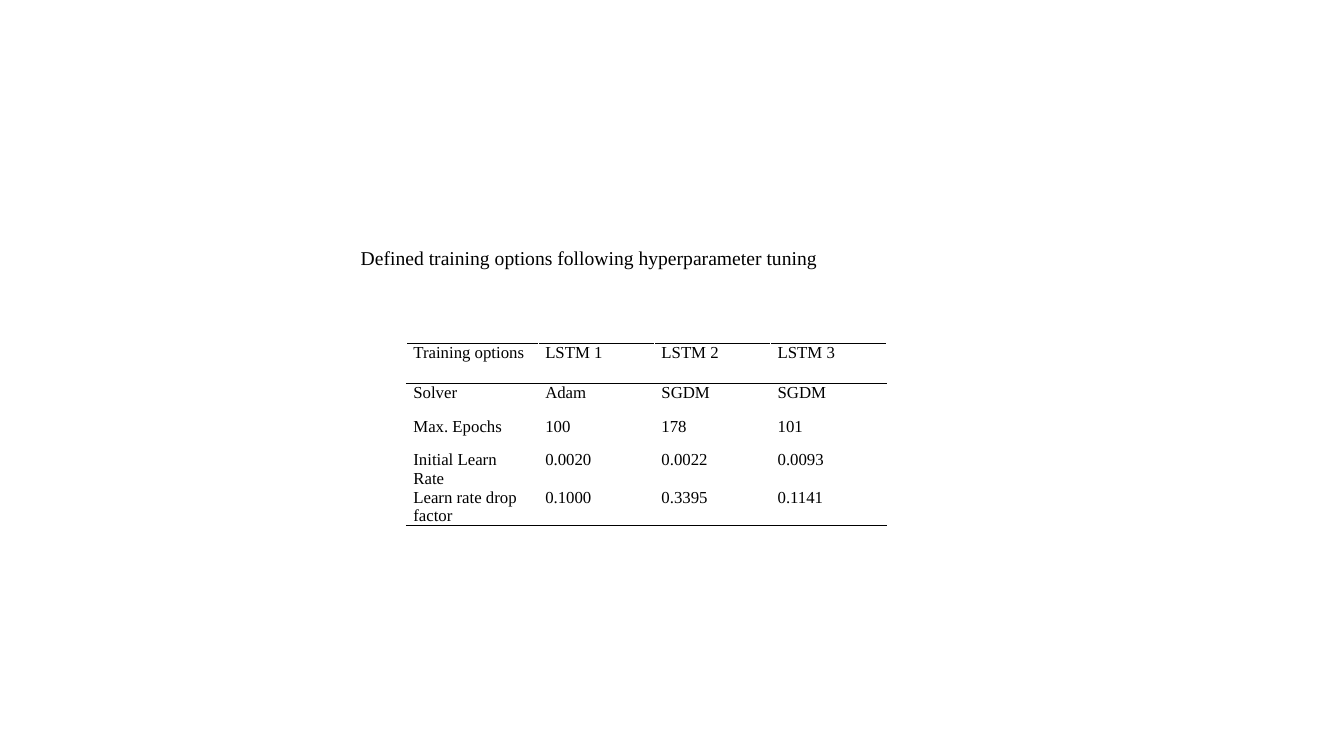
from lxml import etree
from pptx import Presentation
from pptx.dml.color import RGBColor
from pptx.enum.text import MSO_ANCHOR, MSO_AUTO_SIZE
from pptx.oxml.ns import qn
from pptx.util import Pt

# Content
TITLE = "Defined training options following hyperparameter tuning"
TRAINING_OPTIONS = [
    ("Training options", "LSTM 1", "LSTM 2", "LSTM 3"),
    ("Solver", "Adam", "SGDM", "SGDM"),
    ("Max. Epochs", "100", "178", "101"),
    ("Initial Learn Rate", "0.0020", "0.0022", "0.0093"),
    ("Learn rate drop factor", "0.1000", "0.3395", "0.1141"),
]

# Format
BLACK = RGBColor(0, 0, 0)
WHITE = RGBColor(255, 255, 255)
FONT = "Times New Roman"
MIDDLE = MSO_ANCHOR.MIDDLE
FIT_SHAPE = MSO_AUTO_SIZE.SHAPE_TO_FIT_TEXT
CELL_FORMAT = {"margin_left": Pt(5), "margin_right": Pt(5),
               "margin_top": Pt(0), "margin_bottom": Pt(0)}
PARAGRAPH_FORMAT = {"space_before": Pt(3), "space_after": Pt(3)}
TABLE_FORMAT = {"first_row": False, "horz_banding": False}
TITLE_FORMAT = {"word_wrap": False, "auto_size": FIT_SHAPE, "vertical_anchor": MIDDLE}

# Layout in points
TABLE_LEFT, TABLE_TOP = 290.3, 245.3
COLUMN_WIDTHS = [94.2] + [83] * 3
ROW_HEIGHTS = [28.8] + [24] * 4
RULED_EDGES = {0, 1, len(TRAINING_OPTIONS)}  # horizontal edges drawn in black


def apply_format(target, values):
    for name, value in values.items():
        setattr(target, name, value)


def write_text(paragraph, text, size):
    run = paragraph.add_run()
    run.text = text
    apply_format(run.font, {"name": FONT, "size": Pt(size)})
    run.font.color.rgb = BLACK


def set_borders(cell, colors):
    properties = cell._tc.get_or_add_tcPr()
    for position, (tag, color) in enumerate(colors.items()):
        line = etree.Element(qn(tag), w=str(Pt(1)))
        fill = etree.SubElement(line, qn("a:solidFill"))
        etree.SubElement(fill, qn("a:srgbClr"), val=str(color))
        properties.insert(position, line)


def edge_color(edge):
    return BLACK if edge in RULED_EDGES else WHITE


presentation = Presentation()
presentation.slide_width, presentation.slide_height = Pt(960), Pt(540)
slide = presentation.slides.add_slide(presentation.slide_layouts[6])

# Table
table = slide.shapes.add_table(
    len(TRAINING_OPTIONS), len(COLUMN_WIDTHS), Pt(TABLE_LEFT), Pt(TABLE_TOP),
    Pt(sum(COLUMN_WIDTHS)), Pt(sum(ROW_HEIGHTS))).table
apply_format(table, TABLE_FORMAT)
for column, width in zip(table.columns, COLUMN_WIDTHS):
    column.width = Pt(width)
for row, height in zip(table.rows, ROW_HEIGHTS):
    row.height = Pt(height)

for row_index, row_values in enumerate(TRAINING_OPTIONS):
    for column_index, value in enumerate(row_values):
        cell = table.cell(row_index, column_index)
        apply_format(cell, CELL_FORMAT)
        cell.fill.background()
        paragraph = cell.text_frame.paragraphs[0]
        apply_format(paragraph, PARAGRAPH_FORMAT)
        write_text(paragraph, value, 12)
        set_borders(cell, {"a:lnL": WHITE, "a:lnR": WHITE,
                           "a:lnT": edge_color(row_index),
                           "a:lnB": edge_color(row_index + 1)})

# Title
title = slide.shapes.add_textbox(Pt(250.6), Pt(172.1), Pt(343.4), Pt(24.5))
apply_format(title.text_frame, TITLE_FORMAT)
write_text(title.text_frame.paragraphs[0], TITLE, 14)

presentation.save("out.pptx")
